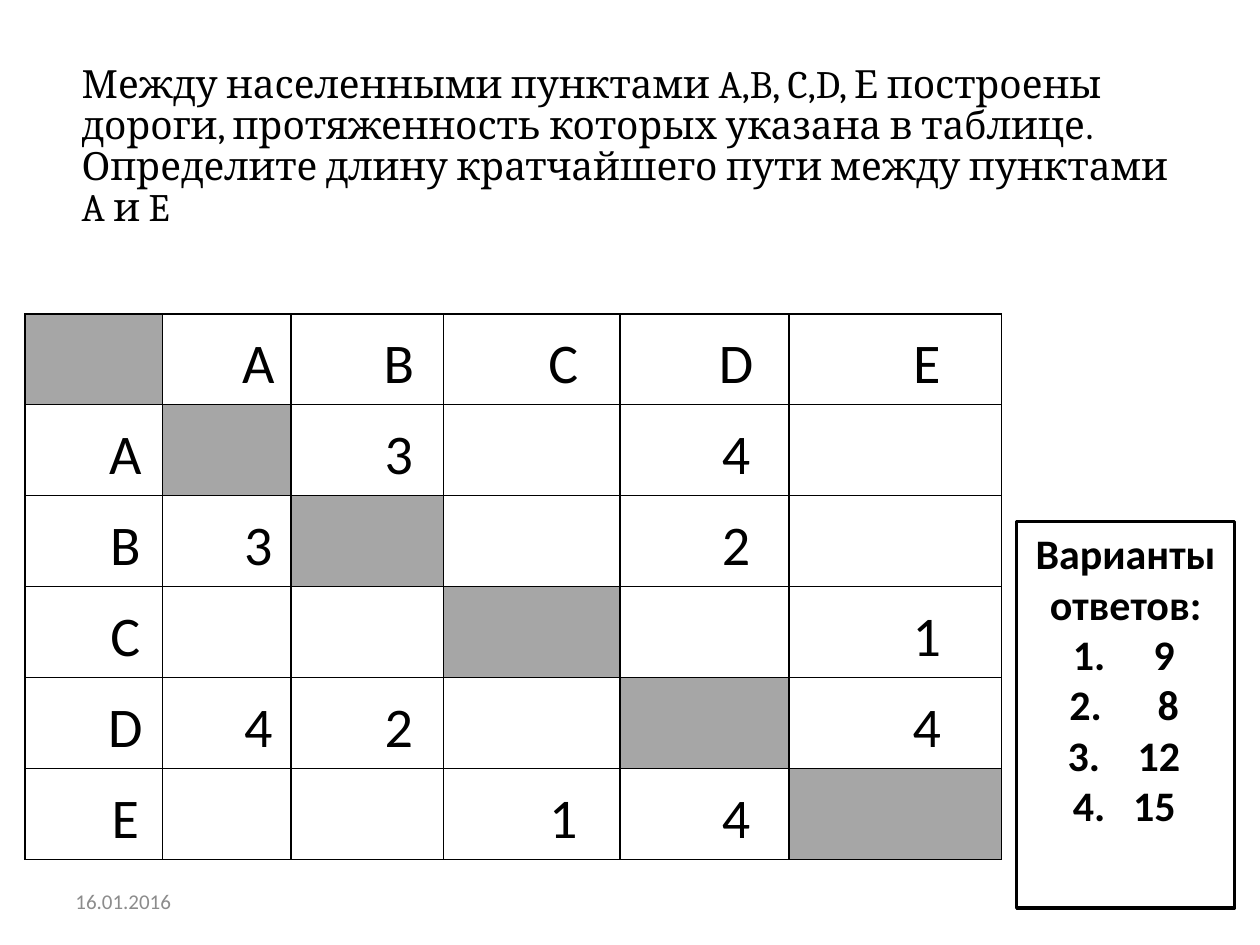
"""Build a slide with a road-distance table and a list of answer options."""
from dataclasses import dataclass

import pptx
import pptx.dml.color
import pptx.enum.shapes
import pptx.enum.text
import pptx.oxml
import pptx.oxml.ns
import pptx.util

Pt = pptx.util.Pt
ALIGN = pptx.enum.text.PP_ALIGN
ANCHOR = pptx.enum.text.MSO_ANCHOR
COLOURS = {"ink": "000000", "paper": "FFFFFF", "diagonal": "A6A6A6", "date": "8C8C8C"}
TOWNS = "ABCDE"
ROADS = {"AB": 3, "AD": 4, "BD": 2, "CE": 1, "DE": 4}
COLUMN_WIDTHS = (78.5, 73.5, 87, 101, 96.5, 121.5)
ROW_HEIGHT = 52


@dataclass
class Box:
    """Position and size in points."""
    left: float
    top: float
    width: float
    height: float

    def lengths(self) -> tuple:
        """Return the four values as lengths."""
        return Pt(self.left), Pt(self.top), Pt(self.width), Pt(self.height)


@dataclass
class Style:
    """Look of a run of text."""
    size: float
    font: str = "Calibri"
    colour: str = "ink"
    bold: bool = False


@dataclass
class Answer:
    """Answer option with the offsets of its number and its value."""
    value: str
    number_left: float
    value_left: float


ANSWERS = (Answer("9", 25, 71), Answer("8", 23, 73.5),
           Answer("12", 22, 62), Answer("15", 25, 59.5))


def rgb(name: str) -> pptx.dml.color.RGBColor:
    """Return a named colour."""
    return pptx.dml.color.RGBColor.from_string(COLOURS[name])


def add_run(paragraph, text: str, style: Style) -> None:
    """Append a formatted run."""
    run = paragraph.add_run()
    run.text = text
    run.font.size = Pt(style.size)
    run.font.name = style.font
    run.font.bold = style.bold
    run.font.color.rgb = rgb(style.colour)


def add_question(slide) -> None:
    """Fill the title with the question."""
    title = slide.shapes.title
    title.left, title.top, title.width, title.height = Box(39.5, 34, 648, 103).lengths()
    frame = title.text_frame
    frame.word_wrap = True
    frame.auto_size = pptx.enum.text.MSO_AUTO_SIZE.NONE
    frame.vertical_anchor = ANCHOR.TOP
    paragraph = frame.paragraphs[0]
    paragraph.alignment = ALIGN.LEFT
    paragraph.line_spacing = 0.88
    paragraph.space_before = Pt(2)
    add_run(paragraph, "Между населенными пунктами A,B, C,D, Е построены дороги, "
            "протяженность которых указана в таблице. Определите длину "
            "кратчайшего пути между пунктами A и E", Style(22.2, "Cambria"))


def add_date(slide) -> None:
    """Add the date at the foot."""
    frame = slide.shapes.add_textbox(*Box(36, 500.5, 168, 29).lengths()).text_frame
    frame.word_wrap = True
    frame.vertical_anchor = ANCHOR.MIDDLE
    add_run(frame.paragraphs[0], "16.01.2016", Style(12, colour="date"))


def border_cell(cell) -> None:
    """Draw thin lines on all four sides of a cell."""
    properties = cell._tc.get_or_add_tcPr()
    for position, side in enumerate(("lnL", "lnR", "lnT", "lnB")):
        properties.insert(position, pptx.oxml.parse_xml(
            f'<a:{side} {pptx.oxml.ns.nsdecls("a")} w="{Pt(1)}"><a:solidFill>'
            f'<a:srgbClr val="{COLOURS["ink"]}"/></a:solidFill></a:{side}>'))


def cell_text(row: int, column: int) -> str:
    """Return a heading, a distance or nothing."""
    if row == column:
        return ""
    if row == 0 or column == 0:
        return TOWNS[max(row, column) - 1]
    pair = TOWNS[min(row, column) - 1] + TOWNS[max(row, column) - 1]
    return str(ROADS.get(pair, ""))


def fill_cell(cell, row: int, column: int) -> None:
    """Format one cell of the distance table."""
    cell.fill.solid()
    cell.fill.fore_color.rgb = rgb("diagonal" if row == column else "paper")
    border_cell(cell)
    cell.vertical_anchor = ANCHOR.MIDDLE
    cell.margin_left = cell.margin_right = Pt(5)
    cell.margin_top = cell.margin_bottom = Pt(0)
    text = cell_text(row, column)
    if text:
        paragraph = cell.text_frame.paragraphs[0]
        paragraph.alignment = ALIGN.CENTER
        paragraph.line_spacing = 1.15
        paragraph._p.get_or_add_pPr().set("marL", str(Pt(36)))
        add_run(paragraph, text, Style(32))


def add_distances(slide) -> None:
    """Add the table of distances."""
    count = len(TOWNS) + 1
    box = Box(14.4, 179.3, sum(COLUMN_WIDTHS), ROW_HEIGHT * count)
    table = slide.shapes.add_table(count, count, *box.lengths()).table
    table.first_row = table.horz_banding = False
    for column, width in enumerate(COLUMN_WIDTHS):
        table.columns[column].width = Pt(width)
    for row in range(count):
        table.rows[row].height = Pt(ROW_HEIGHT)
        for column in range(count):
            fill_cell(table.cell(row, column), row, column)


def add_answers(slide) -> None:
    """Add the framed, numbered answer options."""
    frame_shape = slide.shapes.add_shape(
        pptx.enum.shapes.MSO_SHAPE.RECTANGLE, *Box(581, 298, 124.5, 221).lengths())
    frame_shape.shadow.inherit = False
    frame_shape.fill.background()
    frame_shape.line.color.rgb = rgb("ink")
    frame_shape.line.width = Pt(2)
    frame = frame_shape.text_frame
    frame.word_wrap = True
    frame.vertical_anchor = ANCHOR.TOP
    style = Style(24, bold=True)
    heading = frame.paragraphs[0]
    heading.alignment = ALIGN.CENTER
    add_run(heading, "Варианты ответов:", style)
    for answer in ANSWERS:
        paragraph = frame.add_paragraph()
        paragraph.alignment = ALIGN.LEFT
        properties = paragraph._p.get_or_add_pPr()
        properties.set("marL", str(Pt(answer.value_left)))
        properties.set("indent", str(Pt(answer.number_left - answer.value_left)))
        properties.append(pptx.oxml.parse_xml(
            f'<a:buAutoNum {pptx.oxml.ns.nsdecls("a")} type="arabicPeriod"/>'))
        add_run(paragraph, answer.value, style)


def main() -> None:
    """Create and save the presentation."""
    presentation = pptx.Presentation()
    presentation.slide_width, presentation.slide_height = Pt(720), Pt(540)
    slide = presentation.slides.add_slide(presentation.slide_layouts[5])
    add_question(slide)
    add_date(slide)
    add_distances(slide)
    add_answers(slide)
    presentation.save("out.pptx")


if __name__ == "__main__":
    main()
